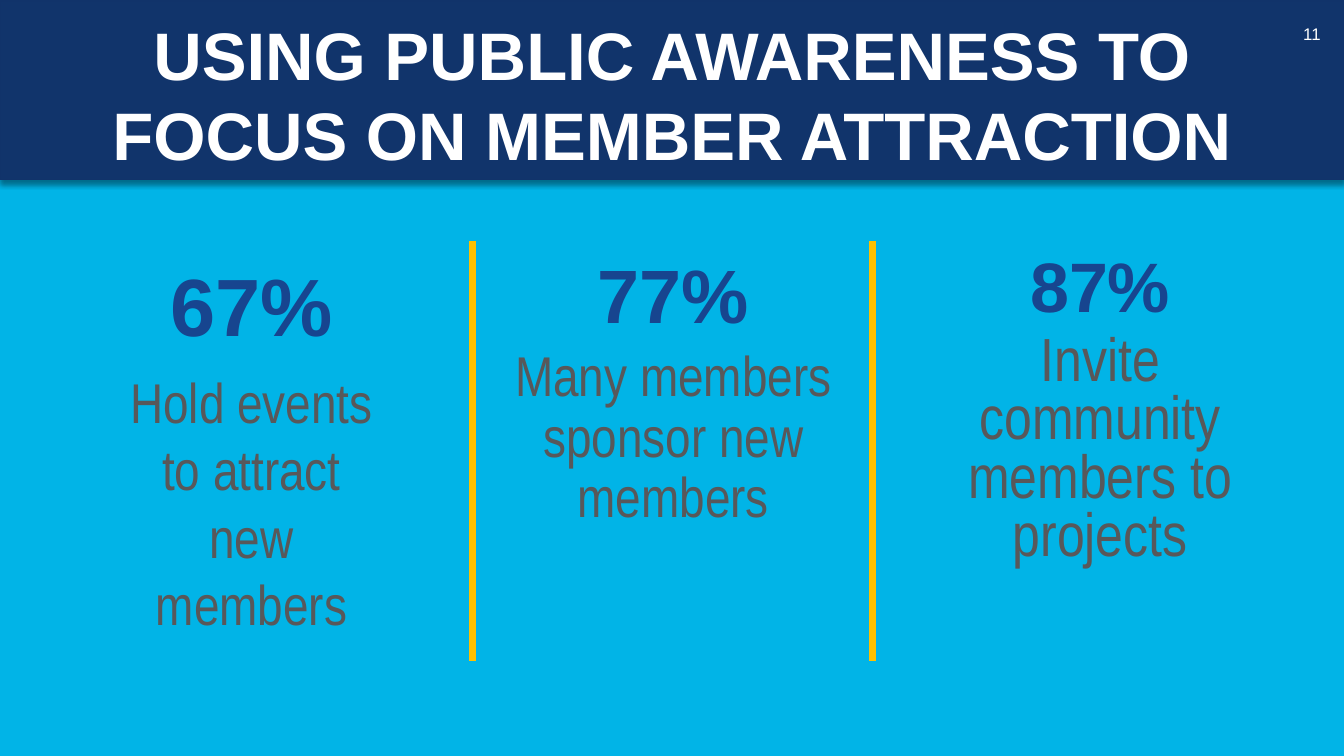
"""Build the slide on public awareness and member attraction."""
from lxml.etree import SubElement
from pptx import Presentation
from pptx.dml.color import RGBColor
from pptx.enum.shapes import MSO_CONNECTOR, MSO_SHAPE
from pptx.enum.text import MSO_ANCHOR, PP_ALIGN
from pptx.oxml import parse_xml
from pptx.oxml.ns import nsdecls, qn
from pptx.util import Pt

CYAN = RGBColor(0x01, 0xB4, 0xE7)
NAVY = RGBColor(0x11, 0x34, 0x6B)
NAVY_EDGE = RGBColor(0x11, 0x33, 0x6A)
BLUE = RGBColor(0x17, 0x45, 0x8F)
GRAY = RGBColor(0x58, 0x58, 0x5A)
GOLD = RGBColor(0xFF, 0xC0, 0x00)
WHITE = RGBColor(0xFF, 0xFF, 0xFF)


def add_frame(left, top, width, height, inset_x=7.2, inset_y=3.6):
    frame = slide.shapes.add_textbox(Pt(left), Pt(top), Pt(width), Pt(height)).text_frame
    frame.word_wrap = True
    frame.margin_left = frame.margin_right = Pt(inset_x)
    frame.margin_top = frame.margin_bottom = Pt(inset_y)
    return frame


def write(paragraph, text, size, color, bold=False, face="Arial", align=PP_ALIGN.CENTER):
    paragraph.text = text
    paragraph.alignment = align
    font = paragraph.font
    font.name, font.size, font.bold = face, Pt(size), bold
    font.color.rgb = color


deck = Presentation()
deck.slide_width, deck.slide_height = Pt(960), Pt(540)
slide = deck.slides.add_slide(deck.slide_layouts[6])
slide.background.fill.solid()
slide.background.fill.fore_color.rgb = CYAN

banner = slide.shapes.add_shape(MSO_SHAPE.RECTANGLE, 0, Pt(0.7), Pt(960), Pt(127.5))
banner.fill.solid()
banner.fill.fore_color.rgb = NAVY
banner.line.color.rgb = NAVY_EDGE
banner.line.width = Pt(1)
banner.shadow.inherit = False
banner_effects = banner.element.spPr.find(qn("a:effectLst"))
banner_effects.append(parse_xml(
    f'<a:outerShdw {nsdecls("a")} blurRad="{Pt(4)}" dist="{Pt(3)}" dir="5400000" rotWithShape="0">'
    '<a:srgbClr val="000000"><a:alpha val="40000"/></a:srgbClr></a:outerShdw>'))

title = add_frame(18.7, 5.8, 923, 123.8)
write(title.paragraphs[0], "USING PUBLIC AWARENESS TO FOCUS ON MEMBER ATTRACTION", 48, WHITE, True)

columns = [
    (84.2, 190.8, 300.2, 7.2, 3.6, "67%", 58, 0.9, "Hold events to attract new members", 40, None, 10),
    (360.7, 240.5, 211, 5, 2.9, "77%", 54, 0.8, "Many members sponsor new members", 40, 0.9, 7.5),
    (686.2, 199.4, 237.6, 5, 2.9, "87%", 50, 0.7, "Invite community members to projects", 43.5, 0.8, 7.5),
]
for (left, width, height, inset_x, inset_y, percent, percent_size, percent_spacing,
     action, action_size, action_spacing, gap) in columns:
    column = add_frame(left, 186.5, width, height, inset_x, inset_y)
    percent_line = column.paragraphs[0]
    write(percent_line, percent, percent_size, BLUE, True)
    percent_line.line_spacing = percent_spacing
    action_line = column.add_paragraph()
    write(action_line, action, action_size, GRAY, face="Arial Narrow")
    action_line.line_spacing = action_spacing
    action_line.space_before = Pt(gap)

for x in (337.7, 623.5):
    divider = slide.shapes.add_connector(MSO_CONNECTOR.STRAIGHT, Pt(x), Pt(172.1), Pt(x), Pt(472.3))
    divider.line.color.rgb = GOLD
    divider.line.width = Pt(5)
    SubElement(divider.element.spPr, qn("a:effectLst"))

page_number = add_frame(917.3, 9.4, 33.1, 28.8)
page_number.vertical_anchor = MSO_ANCHOR.MIDDLE
write(page_number.paragraphs[0], "11", 12, WHITE, align=PP_ALIGN.RIGHT)

deck.save("out.pptx")
